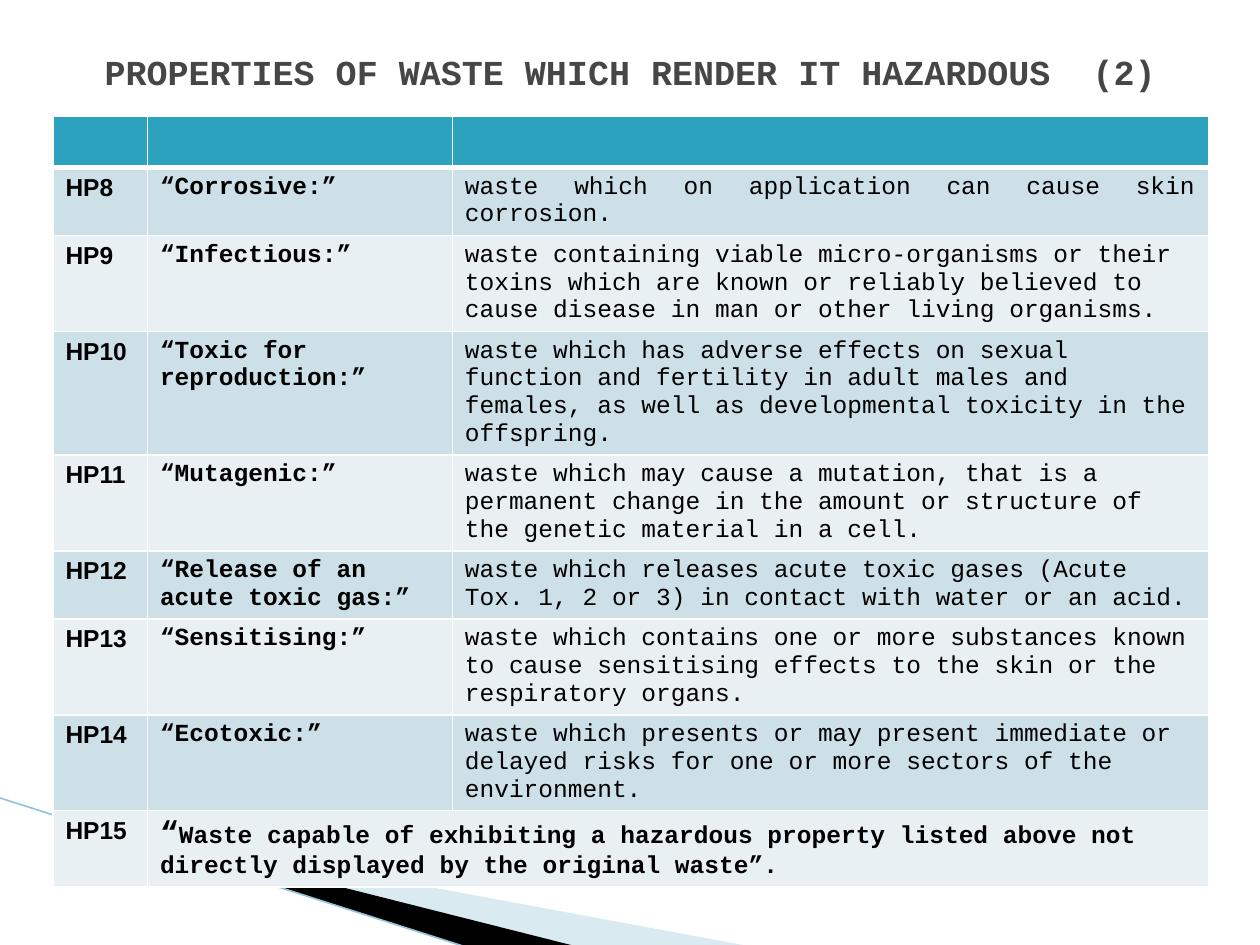
from dataclasses import dataclass

from lxml.etree import SubElement
from pptx import Presentation
from pptx.dml.color import RGBColor
from pptx.enum.shapes import MSO_CONNECTOR
from pptx.enum.text import MSO_ANCHOR, PP_ALIGN
from pptx.oxml.ns import qn
from pptx.util import Inches, Pt


@dataclass(frozen=True)
class Theme:
    heading: str = "464646"
    text: str = "000000"
    header: str = "2DA2BF"
    bands: tuple = ("CDE0E8", "E8F0F4")
    border: str = "FFFFFF"
    pale_wave: str = "A0CBDC"
    dark_wave: str = "000000"
    wave_line: str = "97C5D8"
    mono: str = "Courier New"
    sans: str = "Arial"
    title_size: int = 20
    body_size: int = 14
    quote_size: int = 18


THEME = Theme()
COLUMN_WIDTHS = (0.75, 2.42, 6)
ROW_HEIGHT = 0.41
PROPERTIES = [
    ("HP8", "“Corrosive:”", "waste which on application can cause skin corrosion."),
    ("HP9", "“Infectious:”",
     "waste containing viable micro-organisms or their toxins which are known or "
     "reliably believed to cause disease in man or other living organisms."),
    ("HP10", "“Toxic for reproduction:”",
     "waste which has adverse effects on sexual function and fertility in adult males "
     "and females, as well as developmental toxicity in the offspring."),
    ("HP11", "“Mutagenic:”",
     "waste which may cause a mutation, that is a permanent change in the amount or "
     "structure of the genetic material in a cell."),
    ("HP12", "“Release of an acute toxic gas:”",
     "waste which releases acute toxic gases (Acute Tox. 1, 2 or 3) in contact with "
     "water or an acid."),
    ("HP13", "“Sensitising:”",
     "waste which contains one or more substances known to cause sensitising effects "
     "to the skin or the respiratory organs."),
    ("HP14", "“Ecotoxic:”",
     "waste which presents or may present immediate or delayed risks for one or more "
     "sectors of the environment."),
]
LAST_CODE = "HP15"
LAST_PROPERTY = ("Waste capable of exhibiting a hazardous property listed above not "
                 "directly displayed by the original waste”.")


def rgb(color):
    return RGBColor.from_string(color)


def style(font, name, size, color=THEME.text, bold=True):
    font.name, font.size, font.bold = name, Pt(size), bold
    font.color.rgb = rgb(color)


def add_wave(slide, left, top, points, color, alpha=None):
    """Draw a filled outline; points are inches from left and top."""
    corners = [(Inches(left + x), Inches(top + y)) for x, y in points]
    builder = slide.shapes.build_freeform(*corners[0])
    builder.add_line_segments(corners[1:], close=True)
    wave = builder.convert_to_shape()
    wave.shadow.inherit = False
    wave.fill.solid()
    wave.fill.fore_color.rgb = rgb(color)
    wave.line.fill.background()
    if alpha is not None:
        fill_color = wave.fill._xPr.find(qn("a:solidFill"))[0]
        SubElement(fill_color, qn("a:alpha"), val=str(alpha * 1000))


def add_corner_waves(slide, left, top):
    add_wave(slide, left, top, [(0.55, 0.18), (5.95, 1.18), (4.56, 1.18), (0.55, 0.17)],
             THEME.pale_wave, alpha=40)
    add_wave(slide, left, top, [(0.53, 0.16), (4.57, 1.18), (3.72, 1.19), (0.54, 0.17)],
             THEME.dark_wave)
    edge = slide.shapes.add_connector(
        MSO_CONNECTOR.STRAIGHT, Inches(left - 0.01), Inches(top),
        Inches(left + 3.71), Inches(top + 1.19))
    edge.line.color.rgb = rgb(THEME.wave_line)
    edge.line.width = Pt(0.95)
    SubElement(edge._element.spPr, qn("a:effectLst"))


def add_title(slide, left, top, width, height):
    title = slide.shapes.title
    title.left, title.top = Inches(left), Inches(top)
    title.width, title.height = Inches(width), Inches(height)
    title.text_frame.text = "PROPERTIES OF WASTE WHICH RENDER IT HAZARDOUS  (2)"
    title.text_frame.vertical_anchor = MSO_ANCHOR.MIDDLE
    heading = title.text_frame.paragraphs[0]
    heading.alignment = PP_ALIGN.CENTER
    style(heading.font, THEME.mono, THEME.title_size, THEME.heading)


def format_cell(cell, fill, bottom=1, top=1):
    properties = cell._tc.get_or_add_tcPr()
    for side, width in (("L", 1), ("R", 1), ("T", top), ("B", bottom)):
        border = SubElement(properties, qn(f"a:ln{side}"), w=str(Pt(width)))
        solid = SubElement(border, qn("a:solidFill"))
        SubElement(solid, qn("a:srgbClr"), val=THEME.border)
    cell.fill.solid()
    cell.fill.fore_color.rgb = rgb(fill)


def write_cell(cell, text, font_name=THEME.mono, bold=True):
    paragraph = cell.text_frame.paragraphs[0]
    paragraph.text = text
    style(paragraph.font, font_name, THEME.body_size, bold=bold)
    return paragraph


def add_property_table(slide, left, top):
    row_count = len(PROPERTIES) + 2
    table = slide.shapes.add_table(
        row_count, len(COLUMN_WIDTHS), Inches(left), Inches(top),
        Inches(sum(COLUMN_WIDTHS)), Inches(ROW_HEIGHT * row_count)).table
    for column, width in zip(table.columns, COLUMN_WIDTHS):
        column.width = Inches(width)
    for index, row in enumerate(table.rows):
        row.height = Inches(ROW_HEIGHT)
        for cell in row.cells:
            if index == 0:
                format_cell(cell, THEME.header, bottom=3)
            else:
                format_cell(cell, THEME.bands[(index - 1) % 2], top=3 if index == 1 else 1)

    for index, (code, name, meaning) in enumerate(PROPERTIES, start=1):
        write_cell(table.cell(index, 0), code, THEME.sans)
        name_line = write_cell(table.cell(index, 1), name)
        meaning_line = write_cell(table.cell(index, 2), meaning, bold=False)
        if index == 1:
            name_line.alignment = meaning_line.alignment = PP_ALIGN.JUSTIFY

    last = row_count - 1
    write_cell(table.cell(last, 0), LAST_CODE, THEME.sans)
    wide_cell = table.cell(last, 1)
    wide_cell.merge(table.cell(last, 2))
    sentence = wide_cell.text_frame.paragraphs[0]
    for text, size in (("“", THEME.quote_size), (LAST_PROPERTY, THEME.body_size)):
        run = sentence.add_run()
        run.text = text
        style(run.font, THEME.mono, size)


def main():
    presentation = Presentation()
    presentation.slide_width, presentation.slide_height = Inches(10), Inches(7.5)
    slide = presentation.slides.add_slide(presentation.slide_layouts[5])
    add_corner_waves(slide, 0, 6.33)
    add_title(slide, 0.17, 0.3, 9.67, 0.53)
    add_property_table(slide, 0.42, 0.92)
    presentation.save("out.pptx")


if __name__ == "__main__":
    main()
